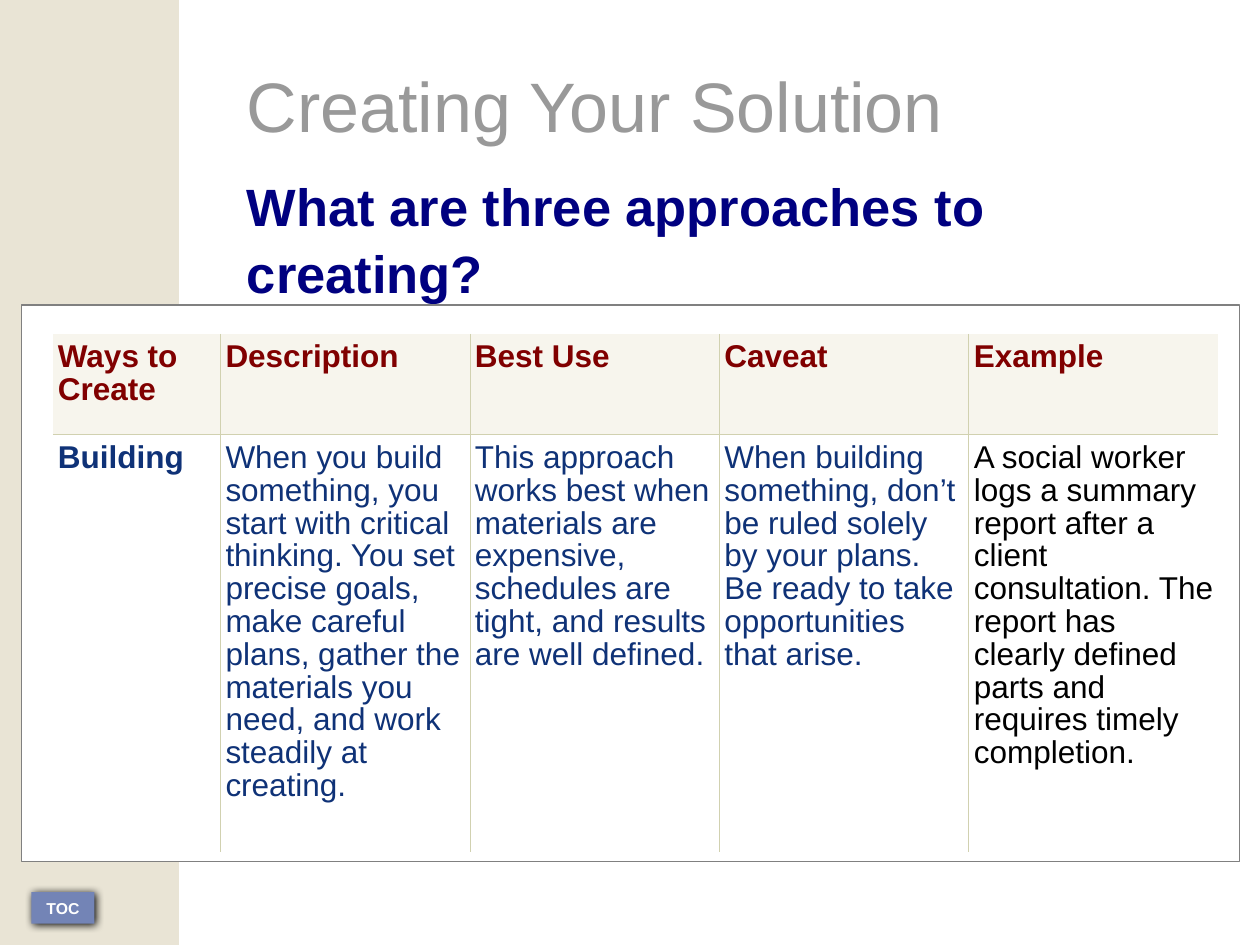
import pptx
import pptx.util
import pptx.dml.color
import pptx.enum.shapes
import pptx.enum.text
import pptx.oxml
import pptx.oxml.ns

Inches = pptx.util.Inches
Pt = pptx.util.Pt
RGBColor = pptx.dml.color.RGBColor
Shape = pptx.enum.shapes.MSO_SHAPE
Align = pptx.enum.text.PP_ALIGN
Anchor = pptx.enum.text.MSO_ANCHOR

WHITE = RGBColor(0xFF, 0xFF, 0xFF)
BLACK = RGBColor(0, 0, 0)
SAND = RGBColor(0xE9, 0xE4, 0xD5)
CREAM = RGBColor(0xF7, 0xF5, 0xED)
RULE = RGBColor(0xD1, 0xD1, 0xB0)
GRAY = RGBColor(0x99, 0x99, 0x99)
FRAME = RGBColor(0x80, 0x80, 0x80)
NAVY = RGBColor(0, 0, 0x80)
BLUE = RGBColor(0x0F, 0x32, 0x77)
MAROON = RGBColor(0x80, 0, 0)
BUTTON = RGBColor(0x73, 0x84, 0xB6)

HEADINGS = ["Ways to Create", "Description", "Best Use", "Caveat", "Example"]
BUILDING = [
    "Building",
    "When you build something, you start with critical thinking. You set precise goals, "
    "make careful plans, gather the materials you need, and work steadily at creating.",
    "This approach works best when materials are expensive, schedules are tight, "
    "and results are well defined.",
    "When building something, don’t be ruled solely by your plans. "
    "Be ready to take opportunities that arise.",
    "A social worker logs a summary report after a client consultation. "
    "The report has clearly defined parts and requires timely completion.",
]


class SlideBuilder:
    font_name = "Arial"

    def __init__(self, page):
        self.page = page

    def style(self, para, size, color, bold=False):
        para.font.name = self.font_name
        para.font.size = Pt(size)
        para.font.bold = bold
        para.font.color.rgb = color

    def title(self, left, top, width, height, lines):
        box = self.page.shapes.title
        box.left, box.top = Inches(left), Inches(top)
        box.width, box.height = Inches(width), Inches(height)
        frame = box.text_frame
        frame.word_wrap = True
        frame.auto_size = pptx.enum.text.MSO_AUTO_SIZE.NONE
        frame.vertical_anchor = Anchor.TOP
        frame.margin_top = Inches(0.08)
        for index, (text, size, color, bold, after) in enumerate(lines):
            para = frame.add_paragraph() if index else frame.paragraphs[0]
            para.text = text
            para.alignment = Align.LEFT
            para.line_spacing = 1.05
            para.space_before = Pt(0)
            para.space_after = Pt(after)
            self.style(para, size, color, bold)

    def panel(self, kind, left, top, width, height, fill, line=None):
        box = self.page.shapes.add_shape(
            kind, Inches(left), Inches(top), Inches(width), Inches(height))
        box.shadow.inherit = False
        box.fill.solid()
        box.fill.fore_color.rgb = fill
        if line is None:
            box.line.fill.background()
        else:
            box.line.color.rgb = line
            box.line.width = Pt(0.71)
        return box

    def button(self, left, top, width, height, text):
        box = self.panel(Shape.RECTANGLE, left, top, width, height, BUTTON)
        effects = box._element.spPr.find(pptx.oxml.ns.qn("a:effectLst"))
        effects.append(pptx.oxml.parse_xml(
            f'<a:outerShdw {pptx.oxml.ns.nsdecls("a")} blurRad="{Pt(5)}" '
            f'dist="{Pt(1.4)}" dir="2700000" algn="ctr" rotWithShape="0">'
            '<a:srgbClr val="000000"/></a:outerShdw>'))
        box.text_frame.vertical_anchor = Anchor.MIDDLE
        para = box.text_frame.paragraphs[0]
        para.text = text
        para.alignment = Align.CENTER
        self.style(para, 9, WHITE, True)

    def border(self, cell, side, visible):
        paint = f'<a:solidFill><a:srgbClr val="{RULE}"/></a:solidFill>' if visible else "<a:noFill/>"
        cell._tc.get_or_add_tcPr().append(pptx.oxml.parse_xml(
            f'<a:ln{side} {pptx.oxml.ns.nsdecls("a")} w="{Pt(0.57)}">{paint}</a:ln{side}>'))

    def cell(self, cell, text, color, bold, fill, inner_sides):
        cell.margin_left = cell.margin_right = cell.margin_bottom = Inches(0.04)
        cell.margin_top = Inches(0.06)
        for side, visible in inner_sides.items():
            self.border(cell, side, visible)
        cell.fill.solid()
        cell.fill.fore_color.rgb = fill
        para = cell.text_frame.paragraphs[0]
        para.text = text
        para.line_spacing = 0.93
        self.style(para, 18, color, bold)

    def table(self, left, top, widths, heights, rows):
        grid = self.page.shapes.add_table(
            len(rows), len(widths), Inches(left), Inches(top),
            Inches(sum(widths)), Inches(sum(heights))).table
        grid.horz_banding = False
        for column, width in zip(grid.columns, widths):
            column.width = Inches(width)
        for row, height in zip(grid.rows, heights):
            row.height = Inches(height)
        last_row, last_column = len(rows) - 1, len(widths) - 1
        for r, texts in enumerate(rows):
            for c, text in enumerate(texts):
                header = r == 0
                color = MAROON if header else BLACK if c == last_column else BLUE
                inner_sides = {"L": c > 0, "R": c < last_column, "T": r > 0, "B": r < last_row}
                self.cell(grid.cell(r, c), text, color, header or c == 0,
                          CREAM if header else WHITE, inner_sides)


def main():
    deck = pptx.Presentation()
    deck.slide_width, deck.slide_height = Inches(10), Inches(7.5)
    builder = SlideBuilder(deck.slides.add_slide(deck.slide_layouts[5]))
    builder.title(1.86, 0.38, 7.54, 2.62, [
        ("Creating Your Solution", 40, GRAY, False, 14.4),
        ("What are three approaches to creating?", 30, NAVY, True, 5.8),
    ])
    builder.panel(Shape.RECTANGLE, 0, 0, 1.42, 7.5, SAND)
    builder.button(0.25, 7.08, 0.5, 0.25, "TOC")
    card = builder.panel(Shape.ROUNDED_RECTANGLE, 0.17, 2.42, 9.67, 4.42, WHITE, FRAME)
    card.adjustments[0] = 0
    builder.table(0.42, 2.65, [1.33] + [1.98] * 4, [0.8, 3.31], [HEADINGS, BUILDING])
    deck.save("out.pptx")


if __name__ == "__main__":
    main()
